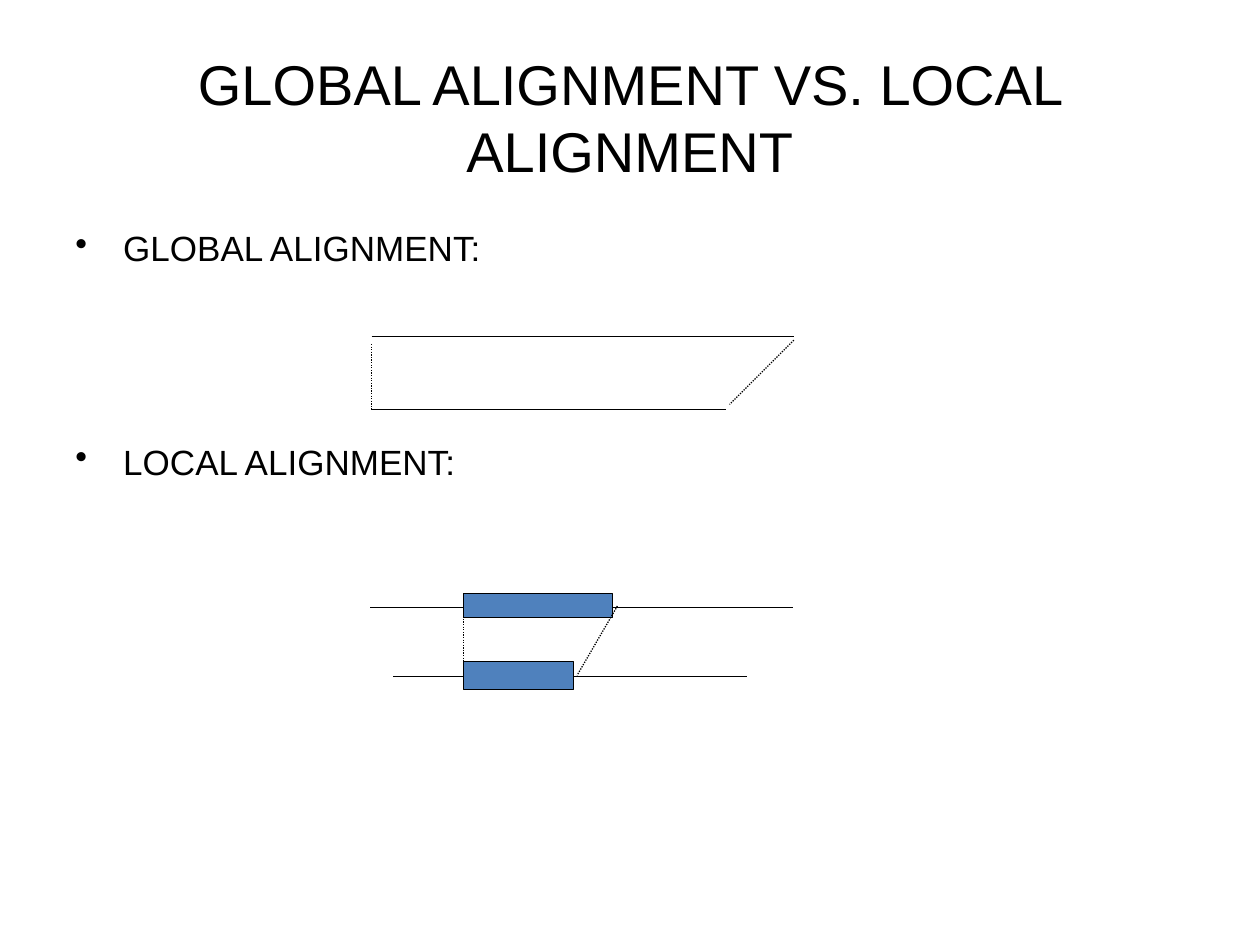
from lxml.etree import SubElement
from pptx import Presentation
from pptx.dml.color import RGBColor
from pptx.enum.dml import MSO_LINE
from pptx.enum.shapes import MSO_CONNECTOR, MSO_SHAPE
from pptx.enum.text import MSO_ANCHOR, PP_ALIGN
from pptx.oxml.ns import qn
from pptx.util import Inches, Pt

COLORS = {"ink": "000000", "region": "4F81BD"}


def color(name):
    return RGBColor.from_string(COLORS[name])


def apply_format(target, values):
    for name, value in values.items():
        setattr(target, name, value)


def add_text_frame(slide, box, anchor):
    text_frame = slide.shapes.add_textbox(*map(Inches, box)).text_frame
    apply_format(text_frame, {"word_wrap": True, "vertical_anchor": anchor})
    return text_frame


def write_paragraph(paragraph, text, size, **values):
    paragraph.text = text
    apply_format(paragraph, values)
    apply_format(paragraph.font, {"name": "Arial", "size": Pt(size)})
    paragraph.font.color.rgb = color("ink")


def add_title(slide, box, text):
    text_frame = add_text_frame(slide, box, MSO_ANCHOR.MIDDLE)
    write_paragraph(text_frame.paragraphs[0], text, 32, alignment=PP_ALIGN.CENTER)


def add_bullets(slide, box, items):
    text_frame = add_text_frame(slide, box, MSO_ANCHOR.TOP)
    for index, (text, gap) in enumerate(items):
        paragraph = text_frame.add_paragraph() if index else text_frame.paragraphs[0]
        write_paragraph(paragraph, text, 20, space_before=Pt(gap))
        properties = paragraph._p.get_or_add_pPr()
        properties.set("marL", str(Inches(0.38)))
        properties.set("indent", str(Inches(-0.38)))
        bullet = properties.makeelement(qn("a:buChar"), {"char": "•"})
        properties.insert_element_before(bullet, "a:tabLst", "a:defRPr", "a:extLst")


def add_line(slide, box, start, end, dash=MSO_LINE.SOLID):
    left, top = box[:2]
    points = [left + start[0], top + start[1], left + end[0], top + end[1]]
    connector = slide.shapes.add_connector(MSO_CONNECTOR.STRAIGHT, *map(Inches, points))
    apply_format(connector.line, {"width": Pt(0.75), "dash_style": dash})
    connector.line.color.rgb = color("ink")
    SubElement(connector._element.spPr, qn("a:effectLst"))


def add_region(slide, box, left, top, width, height):
    shape = slide.shapes.add_shape(
        MSO_SHAPE.RECTANGLE,
        *map(Inches, (box[0] + left, box[1] + top, width, height)),
    )
    shape.shadow.inherit = False
    shape.fill.solid()
    shape.fill.fore_color.rgb = color("region")
    shape.line.color.rgb = color("ink")
    shape.line.width = Pt(0.75)


def add_global_alignment(slide, box):
    width, height = box[2:]
    add_line(slide, box, (0, 0), (width, 0))
    add_line(slide, box, (0, height), (2.81, height))
    add_line(slide, box, (0, 0.06), (0, height), MSO_LINE.ROUND_DOT)
    add_line(slide, box, (width, 0.03), (2.84, 0.54), MSO_LINE.ROUND_DOT)


def add_local_alignment(slide, box):
    width = box[2]
    region_left = 0.74
    add_line(slide, box, (0, 0.11), (width, 0.11))
    add_line(slide, box, (0.18, 0.66), (2.99, 0.66))
    add_region(slide, box, region_left, 0, 1.18, 0.19)
    add_region(slide, box, region_left, 0.54, 0.87, 0.22)
    add_line(slide, box, (region_left, 0.12), (region_left, 0.67), MSO_LINE.ROUND_DOT)
    add_line(slide, box, (1.96, 0.1), (1.64, 0.65), MSO_LINE.ROUND_DOT)


def main():
    presentation = Presentation()
    apply_format(presentation, {"slide_width": Inches(10), "slide_height": Inches(7.5)})
    slide = presentation.slides.add_slide(presentation.slide_layouts[6])
    add_title(slide, (0.5, 0.3, 9, 1.25), "GLOBAL ALIGNMENT VS. LOCAL ALIGNMENT")
    add_bullets(
        slide,
        (0.5, 1.75, 9, 4.95),
        [("GLOBAL ALIGNMENT:", 2), ("LOCAL ALIGNMENT:", 98)],
    )
    add_global_alignment(slide, (2.95, 2.67, 3.35, 0.58))
    add_local_alignment(slide, (2.94, 4.71, 3.35, 0.76))
    presentation.save("out.pptx")


if __name__ == "__main__":
    main()
